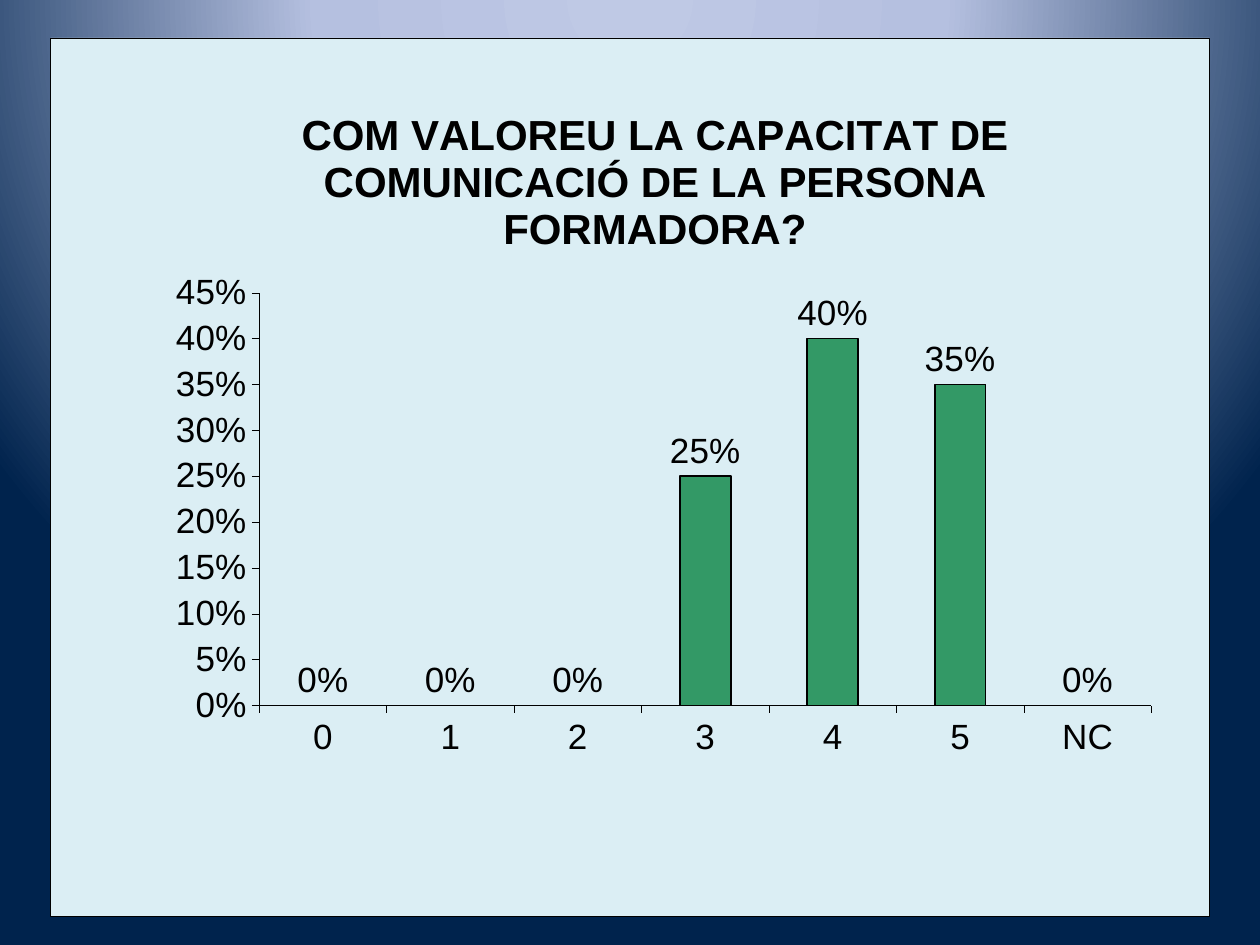
import pptx
import pptx.util
import pptx.oxml
import pptx.oxml.ns
import pptx.dml.color
import pptx.chart.data
import pptx.enum.chart

NS = pptx.oxml.ns.nsdecls("a", "c")
QN = pptx.oxml.ns.qn


def tint(code):
    return pptx.dml.color.RGBColor.from_string(code)


class Deck:
    face = "Arial"
    ink = "000000"
    pale = "DBEEF4"
    green = "339966"

    def __init__(self, wide, high):
        self.show = pptx.Presentation()
        self.show.slide_width = pptx.util.Inches(wide)
        self.show.slide_height = pptx.util.Inches(high)
        self.page = self.show.slides.add_slide(self.show.slide_layouts[6])

    def share(self, left, top, wide, high):
        w, h = self.show.slide_width, self.show.slide_height
        return [int(n) for n in (left * w, top * h, wide * w, high * h)]

    def font(self, font, size, bold=False):
        font.name, font.size, font.bold = self.face, pptx.util.Pt(size), bold
        font.color.rgb = tint(self.ink)

    def line(self, line, width):
        line.color.rgb = tint(self.ink)
        line.width = pptx.util.Pt(width)

    def glow(self, stops):
        fill = self.page.background.fill
        fill.solid()
        solid = self.page.background._cSld.find(".//" + QN("a:solidFill"))
        marks = "".join(
            f'<a:gs pos="{pos * 1000}"><a:srgbClr val="{code}"/></a:gs>'
            for pos, code in stops)
        solid.getparent().replace(solid, pptx.oxml.parse_xml(
            f'<a:gradFill {NS} rotWithShape="1"><a:gsLst>{marks}</a:gsLst>'
            '<a:path path="circle"><a:fillToRect l="50000" t="-80000" '
            'r="50000" b="180000"/></a:path></a:gradFill>'))

    def place(self, part, index, inner=False, **spots):
        for old in part.findall(QN("c:layout")):
            part.remove(old)
        body = '<c:layoutTarget val="inner"/>' if inner else ""
        body += "".join(f'<c:{key}Mode val="edge"/>' for key in "xy")
        body += "".join(f'<c:{key} val="{val}"/>' for key, val in spots.items())
        part.insert(index, pptx.oxml.parse_xml(
            f"<c:layout {NS}><c:manualLayout>{body}</c:manualLayout></c:layout>"))

    def panel(self, chart):
        root = chart._chartSpace
        root.find(QN("c:chart")).addnext(pptx.oxml.parse_xml(
            f'<c:spPr {NS}><a:solidFill><a:srgbClr val="{self.pale}"/></a:solidFill>'
            f'<a:ln w="3175"><a:solidFill><a:srgbClr val="{self.ink}"/></a:solidFill>'
            '</a:ln></c:spPr>'))

    def title(self, chart, text):
        chart.has_title = True
        frame = chart.chart_title.text_frame
        run = frame.paragraphs[0].add_run()
        run.text = text
        self.font(run.font, 24, True)
        chart.chart_title.include_in_layout = False
        self.place(chart.chart_title._element, 1, x=0.21, y=0.07)

    def axis(self, axis):
        axis.has_major_gridlines = False
        axis.major_tick_mark = pptx.enum.chart.XL_TICK_MARK.OUTSIDE
        axis.minor_tick_mark = pptx.enum.chart.XL_TICK_MARK.NONE
        self.font(axis.tick_labels.font, 20)
        self.line(axis.format.line, 0.25)

    def bars(self, spot, title, names, vals):
        data = pptx.chart.data.CategoryChartData(number_format="0%")
        data.categories = names
        data.add_series("Series 1", vals)
        kind = pptx.enum.chart.XL_CHART_TYPE.COLUMN_CLUSTERED
        chart = self.page.shapes.add_chart(kind, *self.share(*spot), data).chart
        chart.has_legend = False
        self.font(chart.font, 8)
        self.panel(chart)
        self.title(chart, title)
        self.axis(chart.category_axis)
        scale = chart.value_axis
        self.axis(scale)
        scale.minimum_scale, scale.maximum_scale, scale.major_unit = 0, 0.45, 0.05
        scale.tick_labels.number_format = "0%"
        scale.tick_labels.number_format_is_linked = False
        area = chart._chartSpace.find(".//" + QN("c:plotArea"))
        self.place(area, 0, True, x=0.18, y=0.29, w=0.77, h=0.47)
        plot = chart.plots[0]
        plot.gap_width = 150
        plot.vary_by_categories = False
        row = plot.series[0]
        row.format.fill.solid()
        row.format.fill.fore_color.rgb = tint(self.green)
        self.line(row.format.line, 1)
        tags = row.data_labels
        tags.show_value = True
        tags.number_format, tags.number_format_is_linked = "0%", False
        tags.position = pptx.enum.chart.XL_LABEL_POSITION.OUTSIDE_END
        self.font(tags.font, 20)


def main():
    deck = Deck(10, 7.5)
    deck.glow([(0, "BFC9E5"), (40, "B5C0E0"), (100, "00234D")])
    deck.bars((0.04, 0.04, 0.92, 0.93),
              "COM VALOREU LA CAPACITAT DE COMUNICACIÓ DE LA PERSONA FORMADORA?",
              ["0", "1", "2", "3", "4", "5", "NC"],
              [0, 0, 0, 0.25, 0.4, 0.35, 0])
    deck.show.save("out.pptx")


if __name__ == "__main__":
    main()
